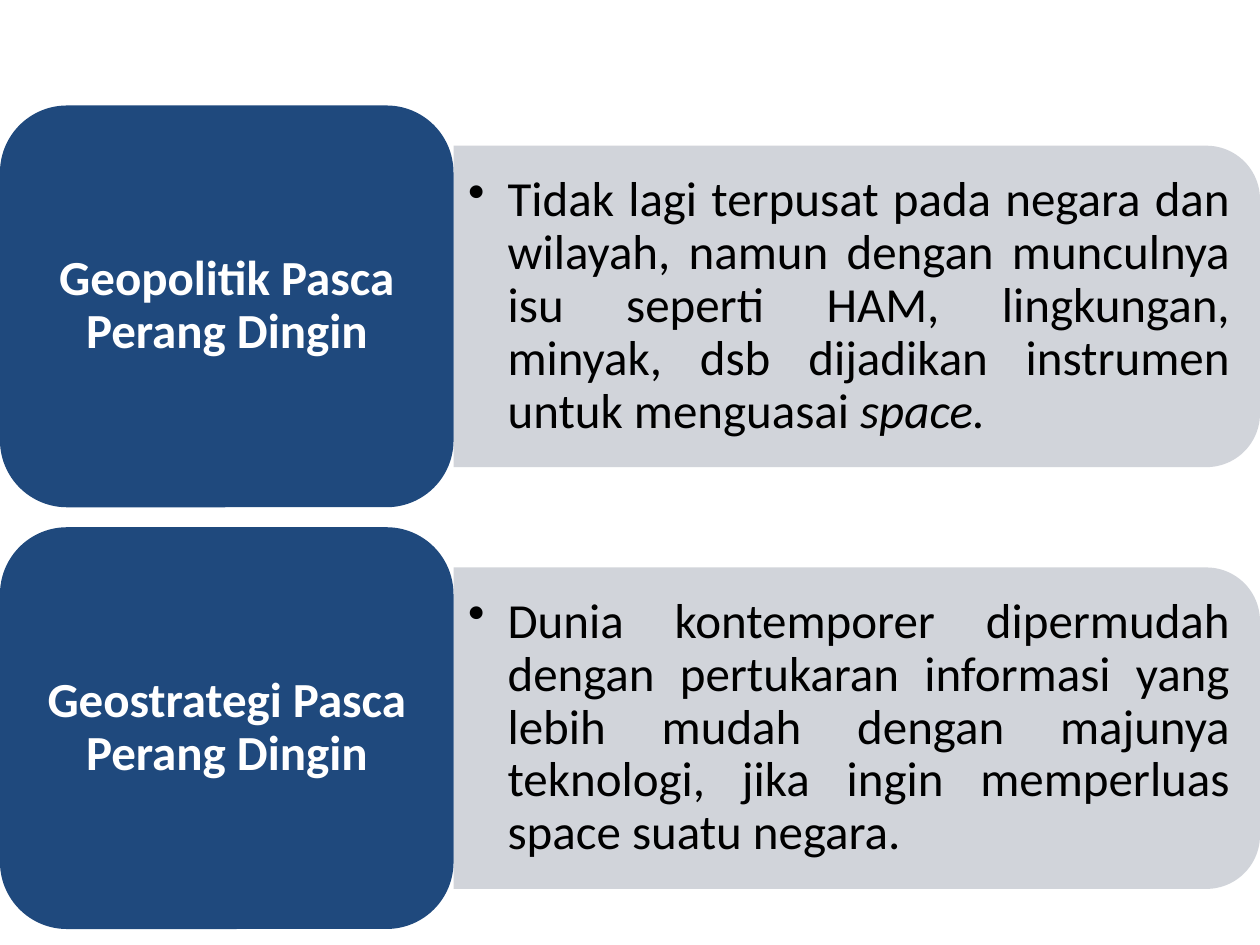
from dataclasses import dataclass

from lxml import etree
from pptx import Presentation
from pptx.dml.color import RGBColor
from pptx.enum.shapes import MSO_SHAPE
from pptx.enum.text import MSO_ANCHOR, PP_ALIGN
from pptx.oxml.ns import qn
from pptx.util import Pt

ROUNDED = MSO_SHAPE.ROUNDED_RECTANGLE
ROUNDED_TOP = MSO_SHAPE.ROUND_2_SAME_RECTANGLE
MIDDLE = MSO_ANCHOR.MIDDLE
CENTER, JUSTIFY = PP_ALIGN.CENTER, PP_ALIGN.JUSTIFY


@dataclass(frozen=True)
class Theme:
    label_fill: str = "1F497D"
    label_text: str = "FFFFFF"
    panel_fill: str = "CDD0D7"
    panel_opacity: int = 90
    body_text: str = "000000"
    font: str = "Calibri"
    size: float = 28
    line_spacing: float = 0.9


@dataclass(frozen=True)
class Topic:
    label: str
    body: str
    emphasis: str = ""


THEME = Theme()
SLIDE_WIDTH, SLIDE_HEIGHT = 720, 540
FIRST_TOP, ROW_PITCH = 60.3, 241
LABEL_WIDTH, LABEL_HEIGHT = 259.2, 229.6
PANEL_WIDTH, PANEL_HEIGHT = SLIDE_WIDTH - LABEL_WIDTH, 183.7
BODY_WIDTH, BODY_HEIGHT = 451.9, 165.6
BULLET_INDENT = 22.5

TOPICS = [
    Topic(
        "Geopolitik Pasca Perang Dingin",
        "Tidak lagi terpusat pada negara dan wilayah, namun dengan munculnya isu "
        "seperti HAM, lingkungan, minyak, dsb dijadikan instrumen untuk menguasai ",
        "space.",
    ),
    Topic(
        "Geostrategi Pasca Perang Dingin",
        "Dunia kontemporer dipermudah dengan pertukaran informasi yang lebih mudah "
        "dengan majunya teknologi, jika ingin memperluas space suatu negara.",
    ),
]


def add_block(slide, kind, left: float, top: float, width: float, height: float,
              color: str, opacity: int = 100):
    block = slide.shapes.add_shape(kind, Pt(left), Pt(top), Pt(width), Pt(height))
    block.shadow.inherit = False
    block.line.fill.background()
    block.fill.solid()
    block.fill.fore_color.rgb = RGBColor.from_string(color)
    if opacity < 100:
        tint = block.fill._xPr.find(".//" + qn("a:srgbClr"))
        etree.SubElement(tint, qn("a:alpha"), val=str(opacity * 1000))
    return block


def add_bullet(para) -> None:
    """Give the paragraph a round bullet with a hanging indent."""
    properties = para._p.get_or_add_pPr()
    properties.set("marL", str(Pt(BULLET_INDENT)))
    properties.set("indent", str(Pt(-BULLET_INDENT)))
    etree.SubElement(properties, qn("a:buChar"), char="•")


def write_text(box, text: str, *, emphasis: str = "", color: str, align,
               bold: bool = False, bullet: bool = False) -> None:
    """Fill the box with one paragraph; the emphasis follows in italics."""
    frame = box.text_frame
    frame.word_wrap = True
    frame.vertical_anchor = MIDDLE
    frame.margin_left = frame.margin_right = Pt(8.4)
    frame.margin_top = frame.margin_bottom = Pt(4.2)
    para = frame.paragraphs[0]
    para.alignment = align
    para.line_spacing = THEME.line_spacing
    if bullet:
        add_bullet(para)
    for words, italic in ((text, False), (emphasis, True)):
        if not words:
            continue
        span = para.add_run()
        span.text = words
        span.font.name = THEME.font
        span.font.size = Pt(THEME.size)
        span.font.bold = bold
        span.font.italic = italic
        span.font.color.rgb = RGBColor.from_string(color)


def add_topic(slide, topic: Topic, top: float) -> None:
    middle = top + LABEL_HEIGHT / 2

    # The panel is drawn upright around its centre, then turned a quarter.
    panel_center = LABEL_WIDTH + PANEL_WIDTH / 2
    panel = add_block(slide, ROUNDED_TOP, panel_center - PANEL_HEIGHT / 2,
                      middle - PANEL_WIDTH / 2, PANEL_HEIGHT, PANEL_WIDTH,
                      THEME.panel_fill, THEME.panel_opacity)
    panel.rotation = 90

    body = slide.shapes.add_textbox(Pt(LABEL_WIDTH), Pt(middle - BODY_HEIGHT / 2),
                                    Pt(BODY_WIDTH), Pt(BODY_HEIGHT))
    write_text(body, topic.body, emphasis=topic.emphasis, color=THEME.body_text,
               align=JUSTIFY, bullet=True)

    label = add_block(slide, ROUNDED, 0, top, LABEL_WIDTH, LABEL_HEIGHT,
                      THEME.label_fill)
    write_text(label, topic.label, color=THEME.label_text, align=CENTER, bold=True)


def main() -> None:
    deck = Presentation()
    deck.slide_width, deck.slide_height = Pt(SLIDE_WIDTH), Pt(SLIDE_HEIGHT)
    page = deck.slides.add_slide(deck.slide_layouts[6])
    for row, topic in enumerate(TOPICS):
        add_topic(page, topic, FIRST_TOP + row * ROW_PITCH)
    deck.save("out.pptx")


if __name__ == "__main__":
    main()
